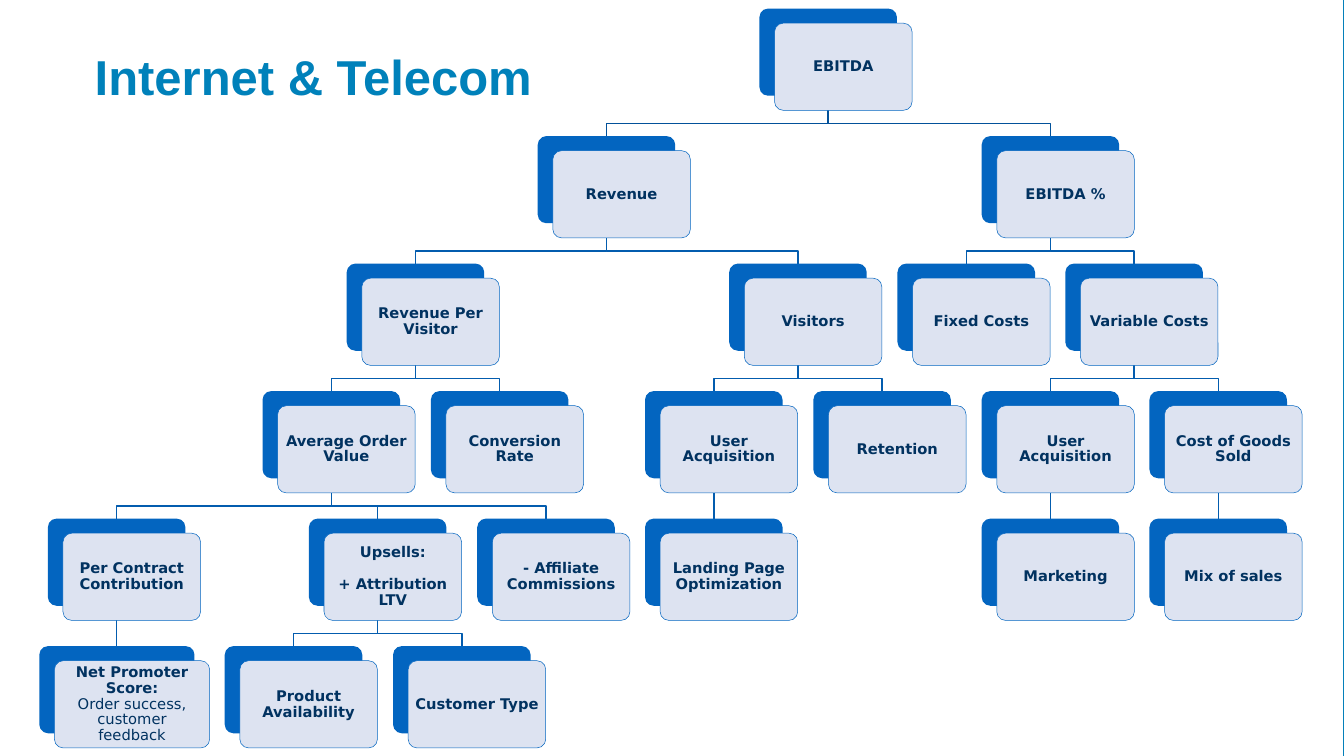
from pptx import Presentation
from pptx.dml.color import RGBColor
from pptx.enum.shapes import MSO_CONNECTOR as LINK, MSO_SHAPE as SHAPE
from pptx.enum.text import MSO_ANCHOR as ANCHOR, MSO_AUTO_SIZE as FIT, PP_ALIGN as ALIGN
from pptx.oxml.ns import qn
from pptx.util import Inches, Pt

WHITE = RGBColor(0xFF, 0xFF, 0xFF)
EDGE = RGBColor(0x04, 0x80, 0xBA)
TEAL = RGBColor(0x00, 0x81, 0xBA)
BLUE = RGBColor(0x03, 0x65, 0xC0)
PALE = RGBColor(0xDD, 0xE3, 0xF1)
NAVY = RGBColor(0x01, 0x32, 0x60)
ROOT = RGBColor(0x02, 0x51, 0x9A)
BRANCH = RGBColor(0x03, 0x5C, 0xAE)

# Box geometry, in inches
TOP, STEP = 0.17, 2.53
WIDE, HIGH = 2.73, 1.73
SHIFT, DROP = 0.3, 0.29
BEND = 0.25

# Tree in reading order: level, left, text (a parent is the last box one level up)
NODES = [
    (0, 15.07, "EBITDA"),
    (1, 10.67, "Revenue"),
    (2, 6.88, "Revenue Per Visitor"),
    (3, 5.21, "Average Order Value"),
    (4, 0.95, "Per Contract Contribution"),
    (5, 0.78, "Net Promoter Score:\nOrder success, customer feedback"),
    (4, 6.13, "Upsells:\n+ Attribution LTV"),
    (5, 4.46, "Product Availability"),
    (5, 7.8, "Customer Type"),
    (4, 9.47, "- Affiliate Commissions"),
    (3, 8.55, "Conversion Rate"),
    (2, 14.47, "Visitors"),
    (3, 12.8, "User Acquisition"),
    (4, 12.8, "Landing Page Optimization"),
    (3, 16.14, "Retention"),
    (1, 19.48, "EBITDA %"),
    (2, 17.81, "Fixed Costs"),
    (2, 21.14, "Variable Costs"),
    (3, 19.48, "User Acquisition"),
    (4, 19.48, "Marketing"),
    (3, 22.81, "Cost of Goods Sold"),
    (4, 22.81, "Mix of sales"),
]
WIDTHS = {"Net Promoter Score:\nOrder success, customer feedback": 3.08}
FORMATS = {
    "Order success, customer feedback": {"bold": False},
    "+ Attribution LTV": {"gap": 22},
}


def text(frame, words, size=21, font="DejaVu Sans", color=NAVY, bold=True,
         align=ALIGN.CENTER, space=0.9, gap=0):
    par = frame.add_paragraph() if frame.text else frame.paragraphs[0]
    par.alignment, par.line_spacing = align, space
    par.space_before = Pt(gap)
    run = par.add_run()
    run.text = words
    run.font.size, run.font.name, run.font.bold = Pt(size), font, bold
    run.font.color.rgb = color


def block(kind, left, top, wide, high, fill):
    box = slide.shapes.add_shape(kind, Inches(left), Inches(top), Inches(wide), Inches(high))
    box.shadow.inherit = False
    box.fill.solid()
    box.fill.fore_color.rgb = fill
    box.line.fill.background()
    if kind == SHAPE.ROUNDED_RECTANGLE:
        box.adjustments[0] = 0.1
    return box


deck = Presentation()
deck.slide_width, deck.slide_height = Inches(26.67), Inches(15)
slide = deck.slides.add_slide(deck.slide_layouts[5])

# Background and white page
slide.background.fill.solid()
slide.background.fill.fore_color.rgb = EDGE
block(SHAPE.RECTANGLE, -0.02, 0, 26.67, 15, WHITE)

# Links from each parent to its children
mids = {}
for level, left, words in NODES:
    mid = left + WIDTHS.get(words, WIDE) / 2
    mids[level] = mid
    if level == 0:
        continue
    start, end = mids[level - 1], mid
    high = TOP + (level - 1) * STEP + HIGH
    low = TOP + level * STEP
    if abs(start - end) < 0.02:
        link = slide.shapes.add_connector(
            LINK.STRAIGHT, Inches(start), Inches(high), Inches(start), Inches(low))
        link.element.spPr.get_or_add_ln()
        link.element.spPr.append(link.element.makeelement(qn("a:effectLst"), {}))
    else:
        path = slide.shapes.build_freeform(Inches(start), Inches(high))
        turns = [(start, low - BEND), (end, low - BEND), (end, low)]
        path.add_line_segments([(Inches(x), Inches(y)) for x, y in turns], close=False)
        link = path.convert_to_shape()
        link.shadow.inherit = False
        link.fill.background()
    link.line.color.rgb = ROOT if level == 1 else BRANCH
    link.line.width = Pt(2)

# Boxes: blue back and pale front with its text
for level, left, words in NODES:
    top = TOP + level * STEP
    wide = WIDTHS.get(words, WIDE)
    block(SHAPE.ROUNDED_RECTANGLE, left, top, wide, HIGH, BLUE)
    front = block(SHAPE.ROUNDED_RECTANGLE, left + SHIFT, top + DROP, wide, HIGH, PALE)
    front.line.color.rgb = BLUE
    front.line.width = Pt(0.75)
    frame = front.text_frame
    frame.word_wrap, frame.vertical_anchor = True, ANCHOR.MIDDLE
    frame.margin_left = frame.margin_right = Inches(0.09)
    frame.margin_top = frame.margin_bottom = Inches(0.09)
    for line in words.split("\n"):
        text(frame, line, **FORMATS.get(line, {}))

# Title, in front of the page
title = slide.shapes.title
title.left, title.top = Inches(1.85), Inches(0.75)
title.width, title.height = Inches(22.97), Inches(1.75)
frame = title.text_frame
frame.auto_size, frame.vertical_anchor = FIT.NONE, ANCHOR.TOP
frame.margin_left, frame.margin_top = Inches(0.03), Inches(0.17)
text(frame, "Internet & Telecom", size=70, font="Arial", color=TEAL,
     align=ALIGN.LEFT, space=1)
title.element.getparent().append(title.element)

deck.save("out.pptx")
